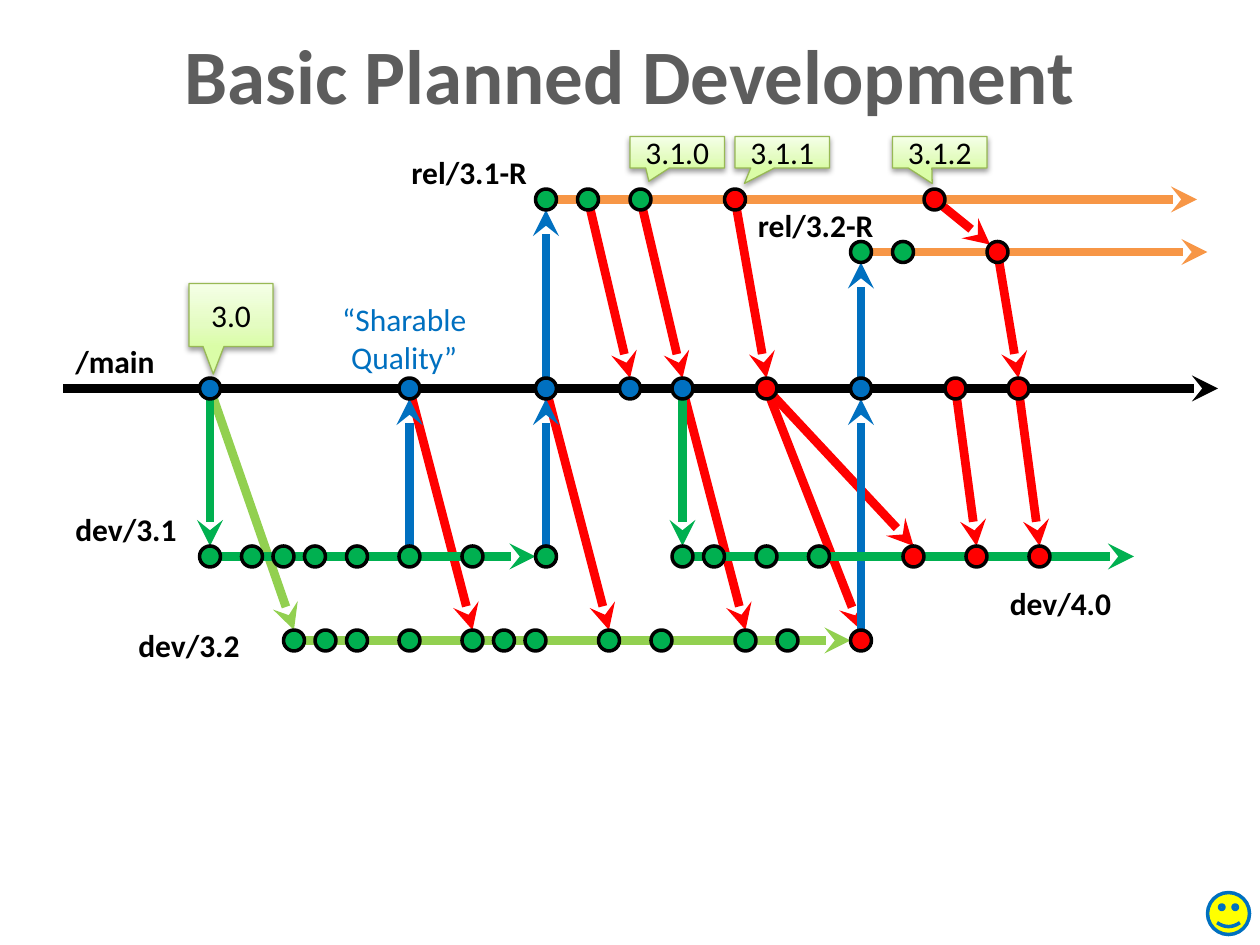
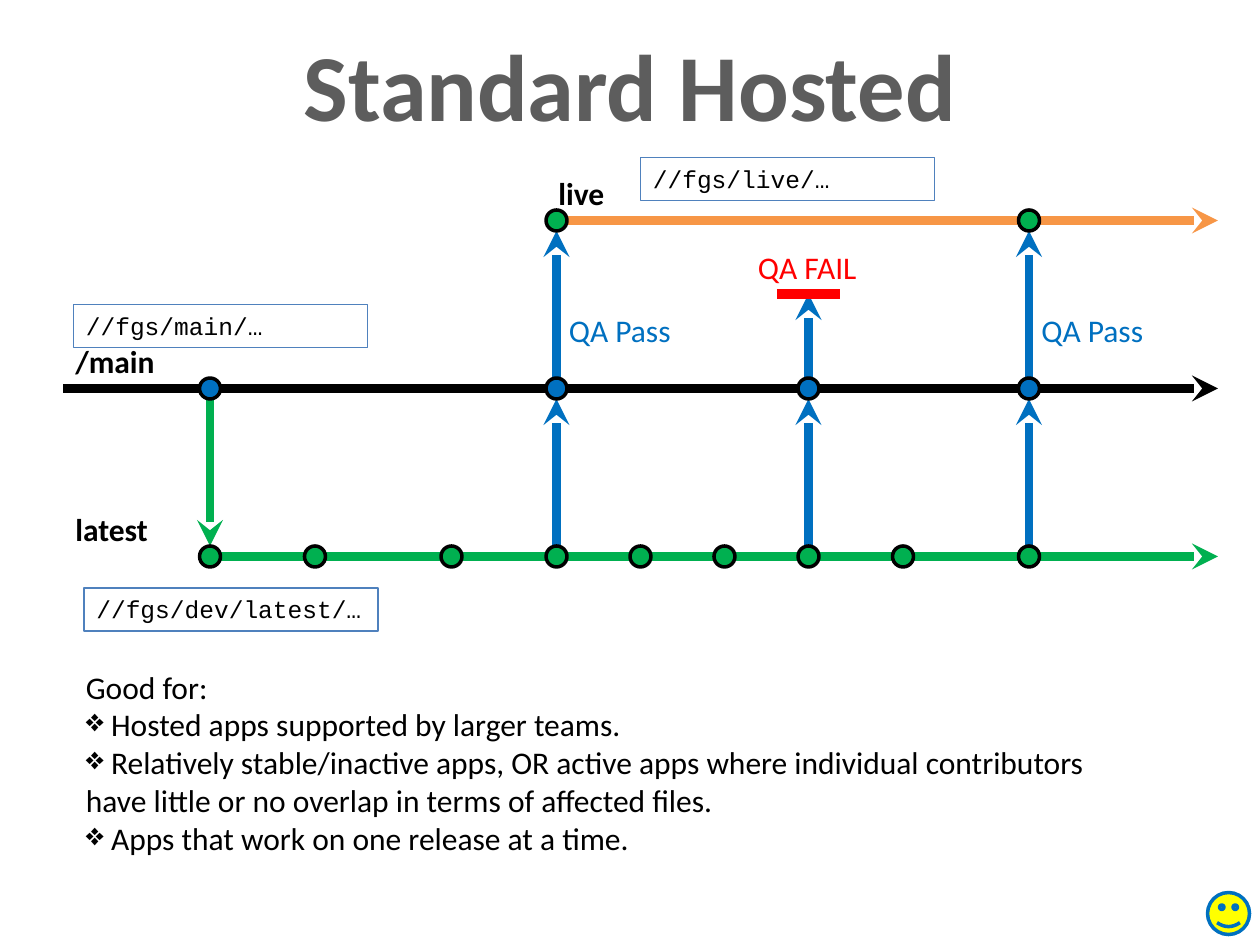
from lxml import etree
from pptx import Presentation
from pptx import util as u
from pptx.dml import color as dml
from pptx.enum import shapes, text
from pptx.oxml import ns

GRID = 2.54 / 12
BLACK, WHITE, GREY = "000000", "FFFFFF", "5D5D5D"
BLUE, RED, GREEN, LIME, ORANGE = "0070C0", "FF0000", "00B050", "92D050", "F79646"
BORDER, CALLOUT_LINE = "4F81BD", "98B955"
CALLOUT_STOPS = ((0, "DAFDA7"), (35, "E4FCC2"), (100, "F5FFE7"))
DIAGRAM_BOX = (6, 13, 110, 51)
NOTES_BOX = (7, 63, 102, 19.5)
SMILEY_BOX = (115, 85, 4, 4)
CENTER = text.PP_ALIGN.CENTER


def grid(units):
    """Turn twelfths of an inch into a length."""
    return u.Cm(units * GRID)


def rgb(hex_string):
    """Turn a hex string into a colour."""
    return dml.RGBColor.from_string(hex_string)


def add_xml(parent, tag, **attributes):
    """Append a DrawingML element."""
    return etree.SubElement(parent, ns.qn(f"a:{tag}"), attributes)


def inside(box, left, top, width, height):
    """Give the lengths of an area placed relative to a box."""
    return [grid(n) for n in (box[0] + left, box[1] + top, width, height)]


def write(paragraph, words, size=18, color=BLACK, font="Calibri", bold=False, align=None):
    """Write formatted words into a paragraph."""
    paragraph.alignment = align
    run = paragraph.add_run()
    run.text = words
    run.font.size = u.Pt(size)
    run.font.name = font
    run.font.bold = bold
    run.font.color.rgb = rgb(color)


def add_text(slide, area, words, wrap=True, fill=None, border=None, **style):
    """Add a text box with optional fill and border."""
    shape = slide.shapes.add_textbox(*area)
    shape.text_frame.word_wrap = wrap
    if fill:
        shape.fill.solid()
        shape.fill.fore_color.rgb = rgb(fill)
    if border:
        shape.line.color.rgb = rgb(border)
        shape.line.width = u.Pt(0.75)
    write(shape.text_frame.paragraphs[0], words, **style)
    return shape


def add_preset(slide, area, kind, fill, line, width=2):
    """Add a filled preset shape without shadow."""
    shape = slide.shapes.add_shape(kind, *area)
    shape.shadow.inherit = False
    shape.fill.solid()
    shape.fill.fore_color.rgb = rgb(fill)
    shape.line.color.rgb = rgb(line)
    shape.line.width = u.Pt(width)
    return shape


def add_line(slide, box, start, end, color, width=5, arrow=True):
    """Add a straight line relative to a box, with an optional arrowhead."""
    points = [grid(box[axis] + point[axis]) for point in (start, end) for axis in (0, 1)]
    connector = slide.shapes.add_connector(shapes.MSO_CONNECTOR.STRAIGHT, *points)
    connector.line.color.rgb = rgb(color)
    connector.line.width = u.Pt(width)
    if arrow:
        add_xml(connector.line._get_or_add_ln(), "tailEnd", type="stealth")
    add_xml(connector._element.spPr, "effectLst")


def add_merge(slide, box, color, x1, y1, x2, y2):
    """Add an arrow from one node to the edge of another."""
    side = 1 if y2 > y1 else -1
    diagonal = abs(x2 - x1) > abs(y2 - y1)
    end = (x2 - 0.7, y2 - 0.7 * side) if diagonal else (x2, y2 - side)
    add_line(slide, box, (x1, y1), end, color)


def add_callout(slide, area, words, adjustments):
    """Add a release callout with gradient and soft shadow."""
    shape = add_preset(slide, area, shapes.MSO_SHAPE.RECTANGULAR_CALLOUT,
                       WHITE, CALLOUT_LINE, 0.75)
    for index, value in enumerate(adjustments):
        shape.adjustments[index] = value
    shape.fill.gradient()
    shape.fill.gradient_angle = 90
    properties = shape._element.spPr
    stops = properties.find(".//" + ns.qn("a:gsLst"))
    for stop in list(stops):
        stops.remove(stop)
    for position, color in CALLOUT_STOPS:
        add_xml(add_xml(stops, "gs", pos=str(position * 1000)), "srgbClr", val=color)
    shadow = add_xml(properties.find(ns.qn("a:effectLst")), "outerShdw", blurRad="40000",
                     dist="20000", dir="5400000", rotWithShape="0")
    add_xml(add_xml(shadow, "srgbClr", val=BLACK), "alpha", val="38000")
    shape.text_frame.vertical_anchor = text.MSO_ANCHOR.MIDDLE
    write(shape.text_frame.paragraphs[0], words, align=CENTER)


def draw_branches(slide, box, labels, merges, lanes):
    """Draw branch names, merge arrows, lanes and their nodes."""
    for left, top, width, words in labels:
        add_text(slide, inside(box, left, top, width, 4.8), words, fill=WHITE, bold=True)
    for color, routes in merges:
        for route in routes:
            add_merge(slide, box, color, *route)
    for color, y, start, end, _ in lanes:
        add_line(slide, box, (start, y), (end, y), color)
    for _, y, _, _, nodes in lanes:
        for color, centers in nodes.items():
            for x in centers:
                add_preset(slide, inside(box, x - 1, y - 1, 2, 2),
                           shapes.MSO_SHAPE.OVAL, color, BLACK)


def draw_planned(slide, box):
    """Draw the planned development branches."""
    rel31, rel32, main, dev, dev32 = 6, 11, 24, 40, 48
    labels = [(32, 1, 15, "rel/3.1-R"), (65, 6, 15, "rel/3.2-R"), (0, 19, 13, "/main"),
              (0, 35, 13, "dev/3.1"), (6, 46, 13, "dev/3.2"), (89, 42, 13, "dev/4.0")]
    merges = [
        (RED, [(91, main, 93, dev), (85, main, 87, dev), (67, main, 81, dev),
               (67, main, 76, dev32), (59, main, 65, dev32), (46, main, 52, dev32),
               (33, main, 39, dev32), (50, rel31, 54, main), (55, rel31, 59, main),
               (64, rel31, 67, main), (89, rel32, 91, main), (83, rel31, 89, rel32)]),
        (LIME, [(14, main, 22, dev32)]),
        (GREEN, [(14, main, 14, dev), (59, main, 59, dev)]),
        (BLUE, [(33, dev, 33, main), (46, dev, 46, main), (46, main, 46, rel31),
                (76, dev32, 76, main), (76, main, 76, rel32)]),
    ]
    lanes = [
        (ORANGE, rel31, 46, 108, {GREEN: (46, 50, 55), RED: (64, 83)}),
        (ORANGE, rel32, 76, 109, {GREEN: (76, 80), RED: (89,)}),
        (BLACK, main, 0, 110, {BLUE: (14, 33, 46, 54, 59, 76), RED: (67, 85, 91)}),
        (GREEN, dev, 13, 45, {GREEN: (14, 18, 21, 24, 28, 33, 39, 46)}),
        (GREEN, dev, 59, 102, {GREEN: (59, 62, 67, 72), RED: (81, 87, 93)}),
        (LIME, dev32, 23, 75,
         {GREEN: (22, 25, 28, 33, 39, 42, 45, 52, 57, 65, 69), RED: (76,)}),
    ]
    draw_branches(slide, box, labels, merges, lanes)
    add_text(slide, inside(box, 25, 15, 15, 8.5), "“Sharable Quality”",
             color=BLUE, align=CENTER)
    for words, area, adjustments in (
            ("3.0", (12, 14, 8, 6), (-0.21, 0.94)), ("3.1.0", (54, 0, 9, 3), (-0.3, 0.92)),
            ("3.1.1", (64, 0, 9, 3), (-0.4, 0.99)), ("3.1.2", (79, 0, 9, 3), (-0.08, 0.99))):
        add_callout(slide, inside(box, *area), words, adjustments)


def draw_hosted(slide, box):
    """Draw the hosted branches with their quality gates."""
    live, fail, main, latest = 8, 15, 24, 40
    passed, failed = (47, 92), 71
    promoted = (47, failed, 92)
    labels = [(0, 19, 13, "/main"), (46, 3, 13, "live"), (0, 35, 13, "latest")]
    merges = [
        (BLUE, [(x, latest, x, main) for x in promoted]
         + [(x, main, x, live) for x in passed] + [(failed, main, failed, fail - 1)]),
        (GREEN, [(14, main, 14, latest)]),
    ]
    lanes = [
        (ORANGE, live, 48, 110, {GREEN: passed}),
        (BLACK, main, 0, 110, {BLUE: (14, *promoted)}),
        (GREEN, latest, 13, 110, {GREEN: (14, 24, 37, 55, 63, 80, *promoted)}),
    ]
    draw_branches(slide, box, labels, merges, lanes)
    add_line(slide, box, (failed - 3, fail), (failed + 3, fail), RED, width=6, arrow=False)
    for x in passed:
        add_text(slide, inside(box, x, 16, 12.2, 4.8), "QA Pass", wrap=False, color=BLUE)
    add_text(slide, inside(box, 65, 10, 11.9, 4.8), "QA FAIL", wrap=False, color=RED)
    for left, top, words in ((1, 16, "//fgs/main/…"), (2, 43, "//fgs/dev/latest/…"),
                             (55, 2, "//fgs/live/…")):
        add_text(slide, inside(box, left, top, 28, 4.1), words, fill=WHITE,
                 border=BORDER, size=14, font="Courier New")


def draw_notes(slide, box):
    """List what the hosted layout suits."""
    shape = add_text(slide, inside(box, 0, 0, *box[2:]), "Good for:")
    for words in (" Hosted apps supported by larger teams.",
                  " Relatively stable/inactive apps, OR active apps where individual "
                  "contributors have little or no overlap in terms of affected files.",
                  " Apps that work on one release at a time."):
        paragraph = shape.text_frame.add_paragraph()
        write(paragraph, words)
        add_xml(paragraph._p.get_or_add_pPr(), "buChar", char="❖")


def start_slide(presentation, title, size, height):
    """Add a slide with its title and the corner smiley."""
    slide = presentation.slides.add_slide(presentation.slide_layouts[5])
    shape = slide.shapes.title
    shape.left, shape.top, shape.width, shape.height = inside((0, 2), 0, 0, 120, height)
    frame = shape.text_frame
    frame.vertical_anchor = text.MSO_ANCHOR.TOP
    frame.auto_size = text.MSO_AUTO_SIZE.NONE
    write(frame.paragraphs[0], title, size=size, color=GREY, bold=True, align=CENTER)
    add_preset(slide, inside(SMILEY_BOX, 0, 0, *SMILEY_BOX[2:]),
               shapes.MSO_SHAPE.SMILEY_FACE, "FFFF00", BLUE)
    return slide


def main():
    """Build and save the presentation."""
    presentation = Presentation()
    presentation.slide_width, presentation.slide_height = u.Cm(25.4), u.Cm(19.05)
    planned = start_slide(presentation, "Basic Planned Development", 44, 10)
    draw_planned(planned, DIAGRAM_BOX)
    hosted = start_slide(presentation, "Standard Hosted", 54, 12)
    draw_hosted(hosted, DIAGRAM_BOX)
    draw_notes(hosted, NOTES_BOX)
    presentation.save("out.pptx")


if __name__ == "__main__":
    main()
